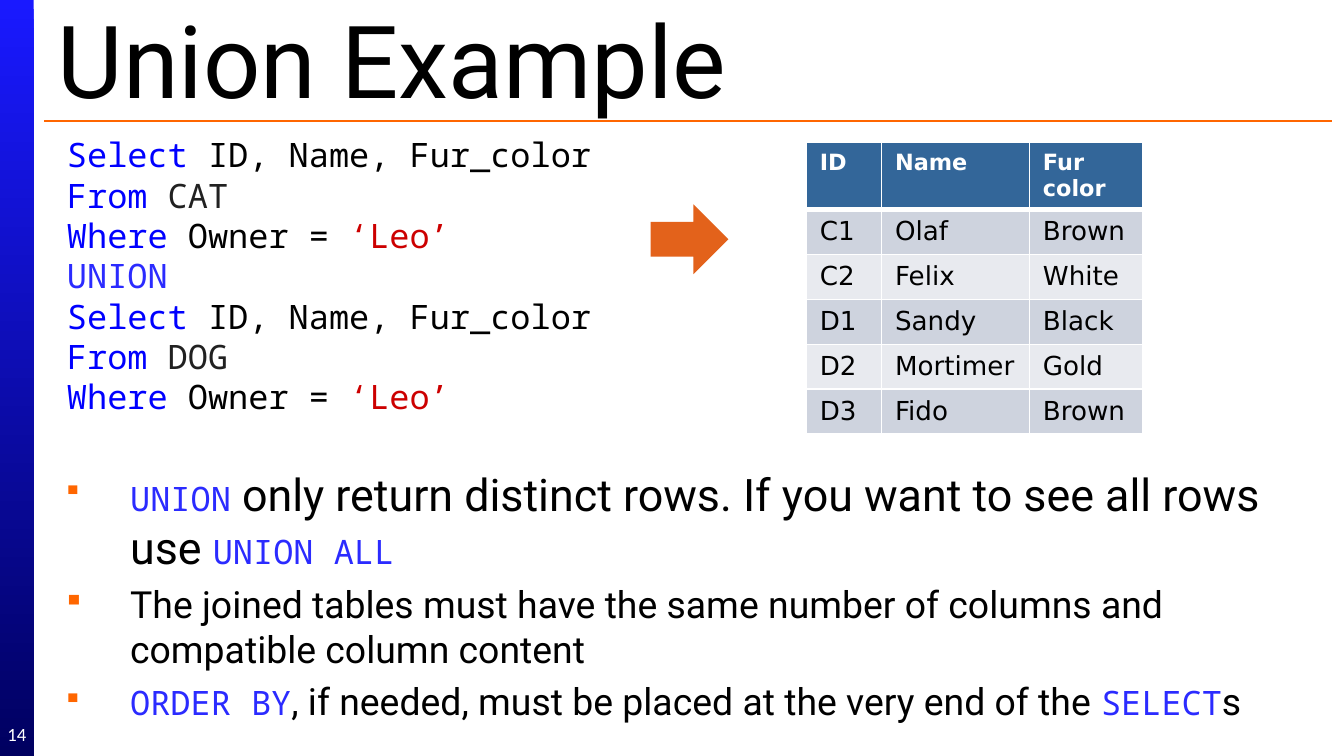
import pptx
import pptx.util
import pptx.dml.color
import pptx.enum.shapes
import pptx.enum.text
import pptx.oxml.ns
import lxml.etree

Inches, Pt = pptx.util.Inches, pptx.util.Pt
RGBColor = pptx.dml.color.RGBColor
ALIGN, ANCHOR = pptx.enum.text.PP_ALIGN, pptx.enum.text.MSO_ANCHOR
SHAPES = pptx.enum.shapes.MSO_SHAPE
qn = pptx.oxml.ns.qn

PAGE_WIDTH = 10
PAGE_HEIGHT = PAGE_WIDTH * 9 / 16

WHITE = RGBColor(0xFF, 0xFF, 0xFF)
BLACK = RGBColor(0, 0, 0)
DARK = RGBColor(0x21, 0x21, 0x21)
ORANGE = RGBColor(0xFF, 0x66, 0x00)
ARROW_ORANGE = RGBColor(0xE3, 0x62, 0x1B)
BAR_TOP = RGBColor(0x19, 0x19, 0xFF)
BAR_BOTTOM = RGBColor(0, 0, 0x60)
KEYWORD = RGBColor(0, 0, 0xFF)
UNION_BLUE = RGBColor(0x2B, 0x2B, 0xFF)
LITERAL = RGBColor(0xCC, 0, 0)
HEADER = RGBColor(0x33, 0x66, 0x99)
BAND_DARK = RGBColor(0xCE, 0xD3, 0xDE)
BAND_LIGHT = RGBColor(0xE8, 0xEA, 0xEF)

MONO = "Noto Sans Mono"
BODY = "Roboto"
TABLE_FONT = "DejaVu Sans"


def add_span(para, text, font=BODY, size=20, color=BLACK, bold=False):
    span = para.add_run()
    span.text = text
    span.font.name = font
    span.font.size = Pt(size)
    span.font.color.rgb = color
    span.font.bold = bold


def add_text_box(page, box, inset=None):
    frame = page.shapes.add_textbox(*map(Inches, box)).text_frame
    frame.word_wrap = True
    if inset is not None:
        frame.margin_left = frame.margin_right = Inches(inset)
        frame.margin_top = frame.margin_bottom = Inches(inset)
    return frame


def paragraphs(frame, count):
    """Yield count paragraphs, the first being the one already there."""
    yield frame.paragraphs[0]
    for _ in range(count - 1):
        yield frame.add_paragraph()


def add_sidebar(page, box, number):
    left, top, width, height = box
    bar = page.shapes.add_shape(SHAPES.RECTANGLE, *map(Inches, box))
    bar.shadow.inherit = False
    bar.line.fill.background()
    bar.fill.gradient()
    bar.fill.gradient_angle = 270
    for stop, color in zip(bar.fill.gradient_stops, (BAR_TOP, BAR_BOTTOM)):
        stop.color.rgb = color
    # Page number
    frame = add_text_box(page, (left, top + height - 0.31, width, 0.3), inset=0)
    frame.vertical_anchor = ANCHOR.MIDDLE
    para = frame.paragraphs[0]
    para.alignment = ALIGN.CENTER
    add_span(para, number, font="Calibri", size=10, color=WHITE)


def add_title(page, box, text):
    left, top, width, height = box
    title = page.shapes.title
    title.left, title.top, title.width, title.height = map(Inches, box)
    frame = title.text_frame
    frame.auto_size = pptx.enum.text.MSO_AUTO_SIZE.NONE
    frame.vertical_anchor = ANCHOR.MIDDLE
    frame.paragraphs[0].alignment = ALIGN.LEFT
    add_span(frame.paragraphs[0], text, size=54)
    # Rule below the title
    rule_y = Inches(top + height + 0.09)
    rule = page.shapes.add_connector(
        pptx.enum.shapes.MSO_CONNECTOR.STRAIGHT,
        Inches(left), rule_y, Inches(left + width), rule_y)
    rule.line.color.rgb = ORANGE
    rule.line.width = Pt(0.75)
    lxml.etree.SubElement(rule._element.spPr, qn("a:effectLst"))


def add_query(page, box, animals):
    def select_from(animal):
        return [
            [("Select ", KEYWORD), ("ID, Name, Fur_color", BLACK)],
            [("From", KEYWORD), (" " + animal, DARK)],
            [("Where ", KEYWORD), ("Owner = ", BLACK), ("‘Leo’", LITERAL)],
        ]

    first, second = animals
    lines = select_from(first) + [[("UNION", UNION_BLUE)]] + select_from(second)
    frame = add_text_box(page, box)
    for para, line in zip(paragraphs(frame, len(lines)), lines):
        for text, color in line:
            add_span(para, text, font=MONO, size=18, color=color)


def add_arrow(page, box):
    arrow = page.shapes.add_shape(SHAPES.RIGHT_ARROW, *map(Inches, box))
    arrow.shadow.inherit = False
    arrow.fill.solid()
    arrow.fill.fore_color.rgb = ARROW_ORANGE
    arrow.line.fill.background()


def set_borders(cell, top, bottom):
    properties = cell._tc.get_or_add_tcPr()
    widths = {"lnL": 1, "lnR": 1, "lnT": top, "lnB": bottom}
    for index, (side, width) in enumerate(widths.items()):
        line = lxml.etree.Element(qn("a:" + side), w=str(Pt(width)))
        fill = lxml.etree.SubElement(line, qn("a:solidFill"))
        lxml.etree.SubElement(fill, qn("a:srgbClr"), val=str(WHITE))
        properties.insert(index, line)


def add_result_table(page, box, rows, column_widths, header_height):
    height = box[3]
    table = page.shapes.add_table(
        len(rows), len(rows[0]), *map(Inches, box)).table
    for column, width in zip(table.columns, column_widths):
        column.width = Inches(width)
    row_height = (height - header_height) / (len(rows) - 1)
    for r, values in enumerate(rows):
        is_header = r == 0
        table.rows[r].height = Inches(header_height if is_header else row_height)
        band = HEADER if is_header else BAND_DARK if r % 2 else BAND_LIGHT
        for c, value in enumerate(values):
            cell = table.cell(r, c)
            cell.fill.solid()
            cell.fill.fore_color.rgb = band
            set_borders(cell, top=3 if r == 1 else 1, bottom=3 if is_header else 1)
            add_span(cell.text_frame.paragraphs[0], value, font=TABLE_FONT,
                     size=12 if is_header else 14,
                     color=WHITE if is_header else BLACK, bold=is_header)


def set_bullet(para, indent):
    properties = para._p.get_or_add_pPr()
    properties.set("marL", str(Inches(indent)))
    properties.set("indent", str(-Inches(indent)))
    color = lxml.etree.SubElement(properties, qn("a:buClr"))
    lxml.etree.SubElement(color, qn("a:srgbClr"), val=str(ORANGE))
    lxml.etree.SubElement(properties, qn("a:buSzPct"), val="80000")
    lxml.etree.SubElement(properties, qn("a:buChar"), char="▪")


def add_union_rules(page, box):
    code = dict(font=MONO, size=18, color=UNION_BLUE)
    large, normal = dict(size=24), dict(size=20)
    points = [
        [("UNION", code),
         (" only return distinct rows. If you want to see all rows use ", large),
         ("UNION ALL", code)],
        [("The joined tables must have the same number of columns and "
          "compatible column content", normal)],
        [("ORDER BY", code),
         (", if needed, must be placed at the very end of the ", normal),
         ("SELECT", code), ("s", normal)],
    ]
    frame = add_text_box(page, box)
    for para, point in zip(paragraphs(frame, len(points)), points):
        para.space_before = Pt(4)
        set_bullet(para, indent=0.5)
        for text, style in point:
            add_span(para, text, **style)


def main():
    deck = pptx.Presentation()
    deck.slide_width, deck.slide_height = Inches(PAGE_WIDTH), Inches(PAGE_HEIGHT)
    page = deck.slides.add_slide(deck.slide_layouts.get_by_name("Title Only"))

    add_sidebar(page, (0, 0, 0.25, PAGE_HEIGHT), "14")
    add_title(page, (0.33, 0.06, 9.58, 0.75), "Union Example")
    add_union_rules(page, (0.37, 3.42, 9.33, 2.18))
    add_query(page, (0.4, 0.95, 4.17, 2.22), ("CAT", "DOG"))
    rows = [
        ("ID", "Name", "Fur color"),
        ("C1", "Olaf", "Brown"),
        ("C2", "Felix", "White"),
        ("D1", "Sandy", "Black"),
        ("D2", "Mortimer", "Gold"),
        ("D3", "Fido", "Brown"),
    ]
    add_result_table(page, (6, 1.06, 2.5, 2.16), rows,
                     column_widths=(0.56, 1.1, 0.84), header_height=0.5)
    add_arrow(page, (4.84, 1.52, 0.58, 0.52))
    deck.save("out.pptx")


if __name__ == "__main__":
    main()
